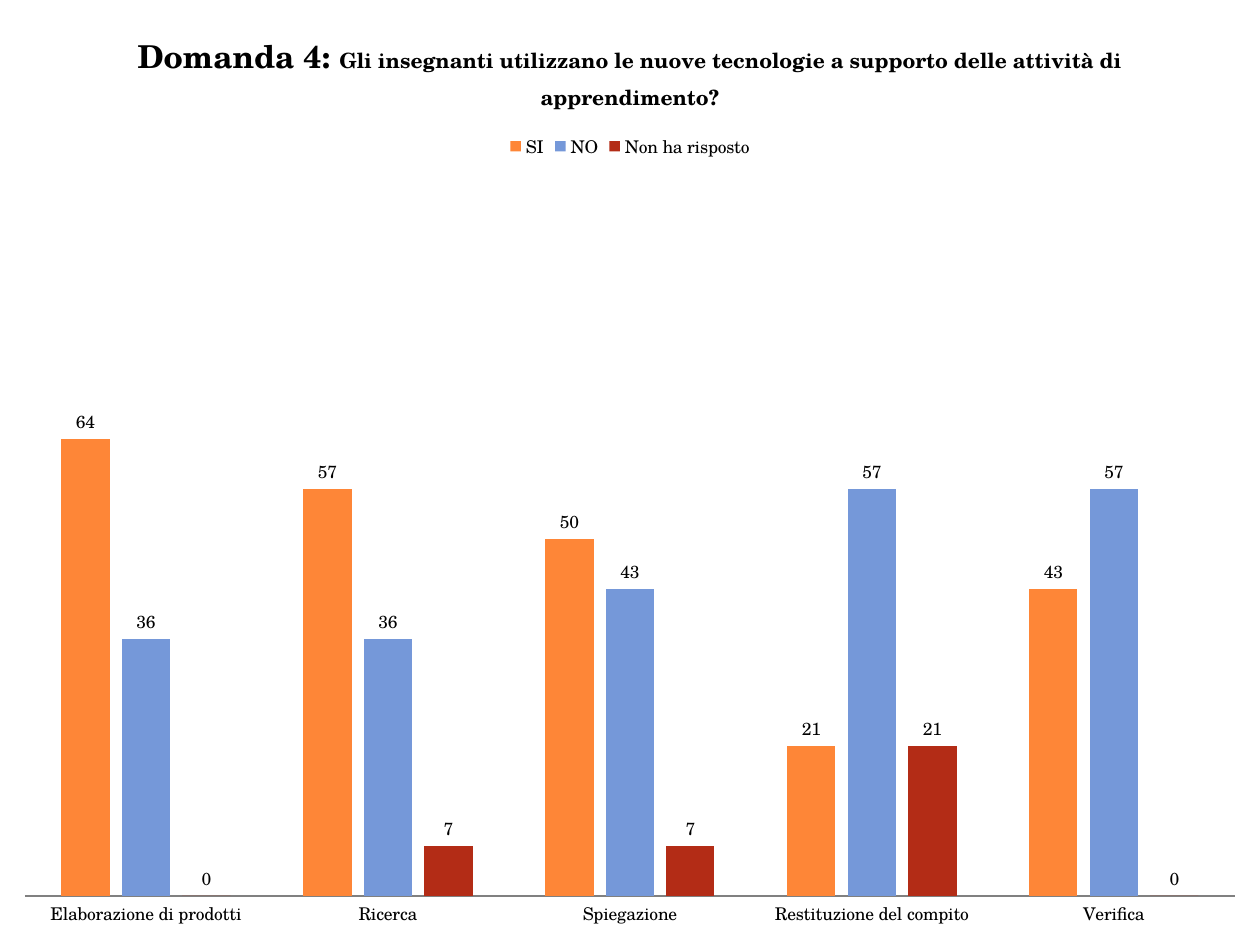
from lxml.etree import SubElement
from pptx import Presentation
from pptx.chart.data import CategoryChartData
from pptx.dml.color import RGBColor
from pptx.enum.chart import (XL_CHART_TYPE, XL_LABEL_POSITION,
                             XL_LEGEND_POSITION, XL_TICK_MARK)
from pptx.oxml.ns import qn
from pptx.util import Pt

PX = 914400 // 126
WIDE, HIGH = 1260, 945
PLOT = {"x": 25, "y": 182, "w": 1210, "h": 714}

FONT = "TeX Gyre Schola"
BLACK = RGBColor(0x00, 0x00, 0x00)
GREY = RGBColor(0x80, 0x80, 0x80)
ORANGE = RGBColor(0xFE, 0x86, 0x37)
BLUE = RGBColor(0x75, 0x98, 0xD9)
RED = RGBColor(0xB3, 0x2C, 0x16)

TITLE = [
    ("Domanda 4: ", 18),
    ("Gli insegnanti utilizzano le nuove tecnologie a supporto "
     "delle attività di apprendimento?", 12),
]
GROUPS = ["Elaborazione di prodotti", "Ricerca", "Spiegazione",
          "Restituzione del compito", "Verifica"]
ANSWERS = [
    ("SI", ORANGE, (64, 57, 50, 21, 43)),
    ("NO", BLUE, (36, 36, 43, 57, 57)),
    ("Non ha risposto", RED, (0, 7, 7, 21, 0)),
]


def set_all(item, **values):
    for name, value in values.items():
        setattr(item, name, value)


def set_font(font, size, bold=False):
    set_all(font, name=FONT, size=Pt(size), bold=bold)
    font.color.rgb = BLACK


def add_chart(slide):
    data = CategoryChartData(number_format="0")
    data.categories = GROUPS
    for name, _, values in ANSWERS:
        data.add_series(name, values)
    frame = slide.shapes.add_chart(XL_CHART_TYPE.COLUMN_CLUSTERED, 0, 0,
                                   WIDE * PX, HIGH * PX, data)
    set_font(frame.chart.font, 10)
    return frame.chart


def add_title(chart):
    chart.has_title = True
    title = chart.chart_title
    title.include_in_layout = False
    para = title.text_frame.paragraphs[0]
    for text, size in TITLE:
        run = para.add_run()
        run.text = text
        set_font(run.font, size, bold=True)


def add_legend(chart):
    chart.has_legend = True
    set_all(chart.legend, position=XL_LEGEND_POSITION.TOP,
            include_in_layout=False)
    set_font(chart.legend.font, 10)


def style_axes(chart):
    set_all(chart.value_axis, minimum_scale=0, maximum_scale=100,
            has_major_gridlines=False, visible=False)
    axis = chart.category_axis
    set_all(axis, major_tick_mark=XL_TICK_MARK.NONE,
            minor_tick_mark=XL_TICK_MARK.NONE)
    axis.format.line.color.rgb = GREY
    axis.format.line.width = Pt(1)


def style_bars(chart):
    plot = chart.plots[0]
    set_all(plot, gap_width=150, overlap=-25, vary_by_categories=False)
    for bars, (_, color, _) in zip(plot.series, ANSWERS):
        bars.format.fill.solid()
        bars.format.fill.fore_color.rgb = color
        labels = bars.data_labels
        set_all(labels, show_value=True, number_format="0",
                number_format_is_linked=False,
                position=XL_LABEL_POSITION.OUTSIDE_END)
        set_font(labels.font, 10)


def place_plot(chart):
    """Fix the inner plot area as fractions of the slide."""
    area = chart.element.find(".//" + qn("c:plotArea"))
    layout = area.find(qn("c:layout"))
    if layout is None:
        layout = SubElement(area, qn("c:layout"))
        area.insert(0, layout)
    box = SubElement(layout, qn("c:manualLayout"))
    marks = {"layoutTarget": "inner", "xMode": "edge", "yMode": "edge"}
    for key, value in PLOT.items():
        marks[key] = round(value / (WIDE if key in "xw" else HIGH), 4)
    for key, value in marks.items():
        SubElement(box, qn("c:" + key)).set("val", str(value))


def main():
    deck = Presentation()
    set_all(deck, slide_width=WIDE * PX, slide_height=HIGH * PX)
    slide = deck.slides.add_slide(deck.slide_layouts[6])

    # Clustered columns that fill the slide
    chart = add_chart(slide)
    add_title(chart)
    add_legend(chart)
    style_axes(chart)
    style_bars(chart)
    place_plot(chart)

    deck.save("out.pptx")


if __name__ == "__main__":
    main()
